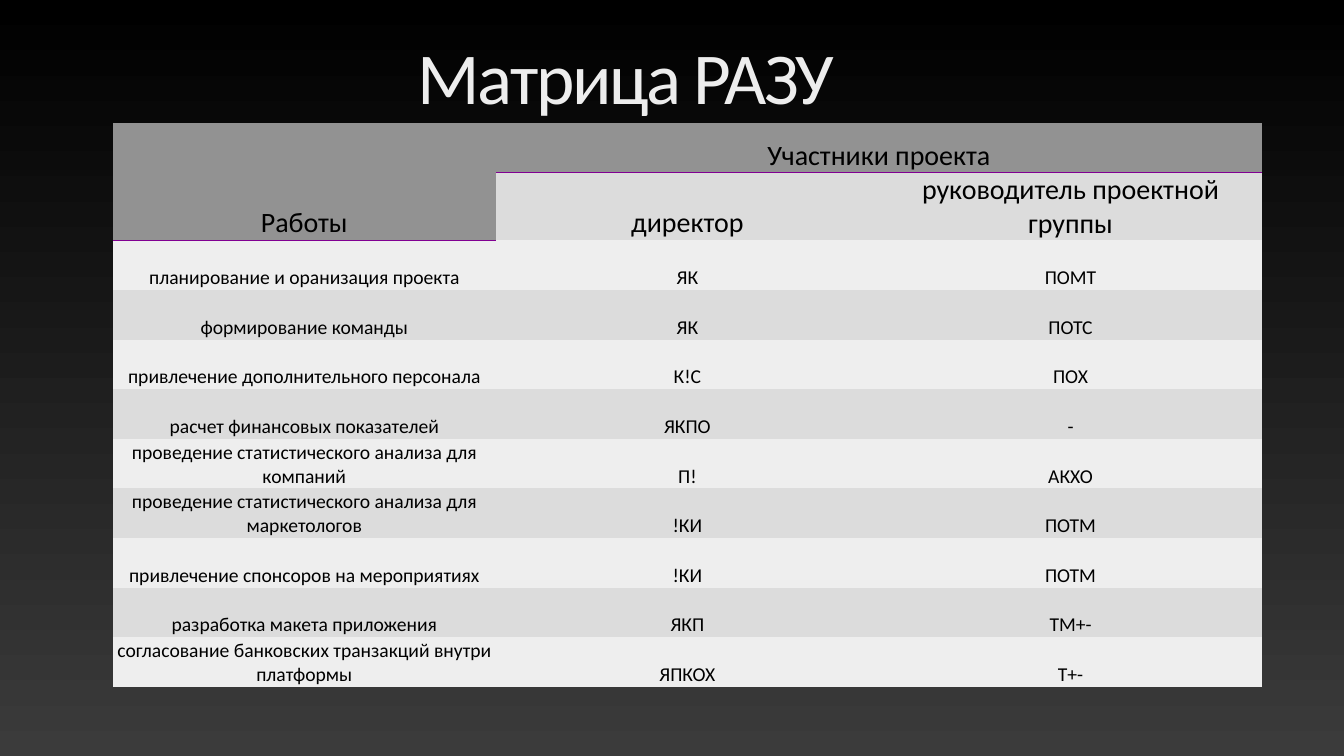
from dataclasses import dataclass

from lxml import etree
from pptx import Presentation
from pptx.dml.color import RGBColor
from pptx.enum.text import MSO_ANCHOR, PP_ALIGN
from pptx.oxml.ns import qn
from pptx.slide import Slide
from pptx.util import Cm, Pt

CENTER = PP_ALIGN.CENTER
BOTTOM = MSO_ANCHOR.BOTTOM
PLAIN_TABLE = "{2D5ABB26-0587-4C30-8999-92F81FD0307C}"

HEADER_FILL, DARK_BAND, LIGHT_BAND = "929292", "DCDCDC", "EEEEEE"
BORDER_COLOR = "810092"
COLUMNS, COLUMN_WIDTH, ROW_HEIGHT = 3, 19.31, 2.5

ROWS = [
    ("Работы", "Участники проекта", ""),
    ("", "директор", "руководитель проектной группы"),
    ("планирование и оранизация проекта", "ЯК", "ПОМТ"),
    ("формирование команды", "ЯК", "ПОТС"),
    ("привлечение дополнительного персонала", "К!С", "ПОХ"),
    ("расчет финансовых показателей", "ЯКПО", "-"),
    ("проведение статистического анализа для компаний", "П!", "АКХО"),
    ("проведение статистического анализа для маркетологов", "!КИ", "ПОТМ"),
    ("привлечение спонсоров на мероприятиях", "!КИ", "ПОТМ"),
    ("разработка макета приложения", "ЯКП", "ТМ+-"),
    ("согласование банковских транзакций внутри платформы", "ЯПКОХ", "Т+-"),
]


def color(value):
    return RGBColor.from_string(value)


@dataclass
class SlideBuilder:
    """Draws the elements of a slide in one style."""

    slide: Slide
    font_name: str = "Calibri"

    def background(self, top_color, bottom_color):
        fill = self.slide.background.fill
        fill.gradient()
        fill.gradient_angle = 270
        for stop, value in zip(fill.gradient_stops, (top_color, bottom_color)):
            stop.color.rgb = color(value)

    def style(self, paragraph, size, font_color):
        paragraph.alignment = CENTER
        paragraph.font.name = self.font_name
        paragraph.font.size = Pt(size)
        paragraph.font.color.rgb = color(font_color)

    def title(self, text, left, top, width, height):
        shape = self.slide.shapes.add_textbox(Cm(left), Cm(top), Cm(width), Cm(height))
        frame = shape.text_frame
        frame.word_wrap = True
        frame.vertical_anchor = BOTTOM
        frame.margin_left = frame.margin_right = Cm(0.15)
        frame.margin_top = frame.margin_bottom = Cm(0.15)
        paragraph = frame.paragraphs[0]
        paragraph.line_spacing = 0.9
        run = paragraph.add_run()
        run.text = text
        self.style(paragraph, 104.4, "EDEDED")
        run.font._element.set("spc", "-350")

    def cell(self, cell, text, size, fill_color):
        cell.fill.solid()
        cell.fill.fore_color.rgb = color(fill_color)
        cell.vertical_anchor = BOTTOM
        cell.margin_left = cell.margin_right = cell.margin_top = Cm(0.03)
        cell.margin_bottom = 0
        cell.text = text
        self.style(cell.text_frame.paragraphs[0], size, "000000")

    def bottom_border(self, cell, line_color, width):
        line = etree.Element(qn("a:lnB"), w=str(Pt(width)))
        fill = etree.SubElement(line, qn("a:solidFill"))
        etree.SubElement(fill, qn("a:srgbClr"), val=line_color)
        cell._tc.get_or_add_tcPr().insert(0, line)

    def matrix(self, rows, left, top):
        frame = self.slide.shapes.add_table(
            len(rows), COLUMNS, Cm(left), Cm(top),
            Cm(COLUMN_WIDTH * COLUMNS), Cm(ROW_HEIGHT * len(rows)))
        table = frame.table
        table.first_row = table.horz_banding = False
        table._tbl.tblPr.find(qn("a:tableStyleId")).text = PLAIN_TABLE
        for column in table.columns:
            column.width = Cm(COLUMN_WIDTH)
        for row_index, texts in enumerate(rows):
            table.rows[row_index].height = Cm(ROW_HEIGHT)
            size = 40 if row_index < 2 else 28
            band = DARK_BAND if row_index % 2 else LIGHT_BAND
            for column_index, text in enumerate(texts):
                is_header = row_index == 0 or (row_index == 1 and column_index == 0)
                fill_color = HEADER_FILL if is_header else band
                self.cell(table.cell(row_index, column_index), text, size, fill_color)
        for row_index, column_index in ((0, 0), (1, 0), (0, 1), (0, 2)):
            self.bottom_border(table.cell(row_index, column_index), BORDER_COLOR, 2)
        table.cell(0, 0).merge(table.cell(1, 0))
        table.cell(0, 1).merge(table.cell(0, 2))


def main():
    presentation = Presentation()
    presentation.slide_width = Cm(67.74)
    presentation.slide_height = Cm(38.1)
    slide = presentation.slides.add_slide(presentation.slide_layouts[6])
    builder = SlideBuilder(slide)
    builder.background("000000", "3B3B3B")
    builder.title("Матрица РАЗУ", 14.94, 1.78, 33.25, 4.42)
    builder.matrix(ROWS, 5.68, 6.2)
    presentation.save("out.pptx")


if __name__ == "__main__":
    main()
